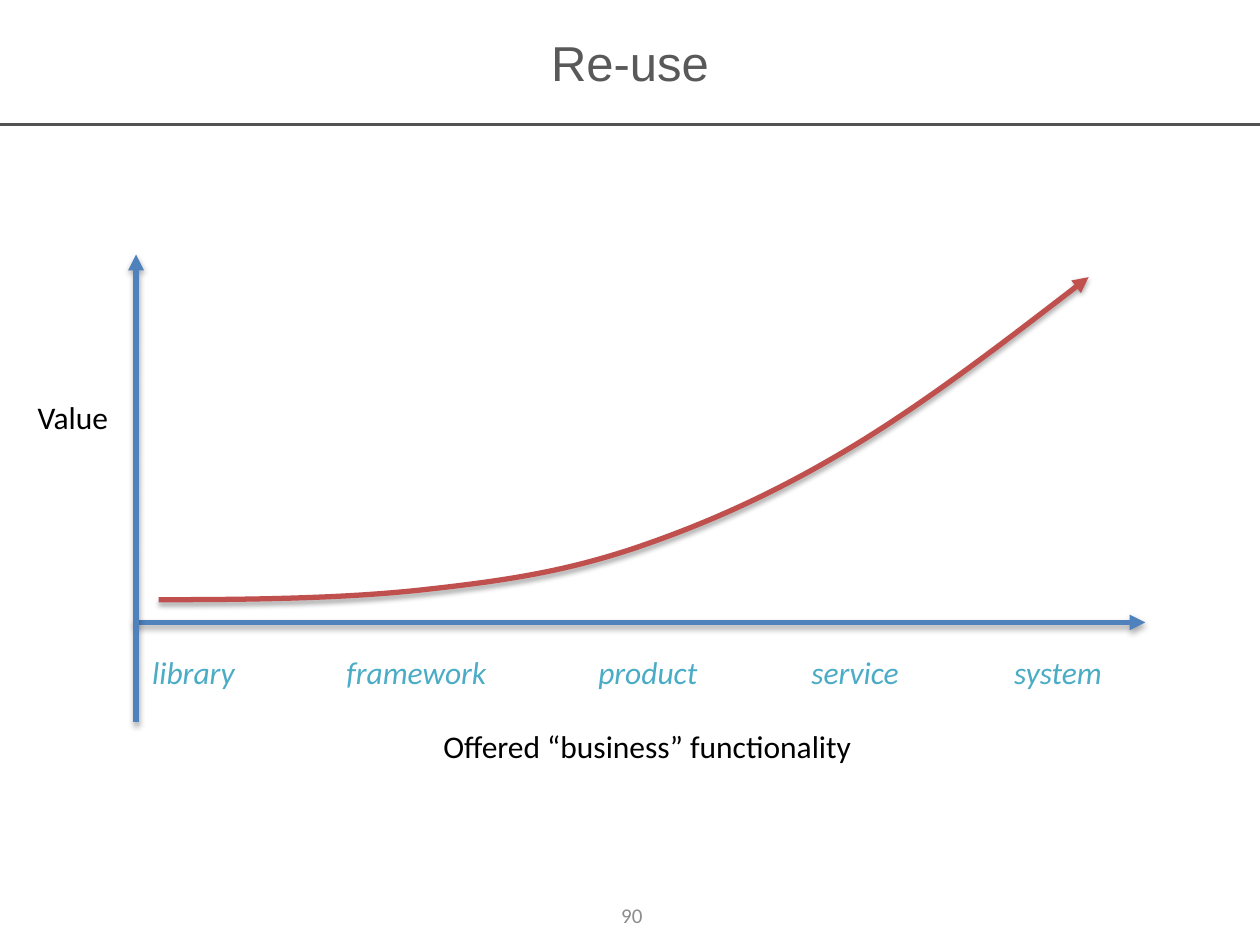
from lxml import etree
from pptx import Presentation
from pptx.dml.color import RGBColor
from pptx.enum.shapes import MSO_CONNECTOR
from pptx.enum.text import MSO_ANCHOR, MSO_AUTO_SIZE, PP_ALIGN
from pptx.oxml.ns import qn
from pptx.util import Inches, Pt

STRAIGHT = MSO_CONNECTOR.STRAIGHT
MIDDLE, TOP = MSO_ANCHOR.MIDDLE, MSO_ANCHOR.TOP
CENTER, LEFT = PP_ALIGN.CENTER, PP_ALIGN.LEFT
FIT_SHAPE, NO_FIT = MSO_AUTO_SIZE.SHAPE_TO_FIT_TEXT, MSO_AUTO_SIZE.NONE

COLORS = {
    "title": "595959", "rule": "525252", "axis": "4F81BD", "curve": "C0504D",
    "label": "000000", "stage": "4BACC6", "number": "8C8C8C", "shadow": "000000",
}

TITLE = "Re-use"
PAGE_NUMBER = "90"
RULE_Y = 0.99
LABEL_HEIGHT = 0.4
STAGE_TOP = 5.13
AXIS_LABELS = [("Value", 0.2, 3.11, 0.77),
               ("Offered “business” functionality", 3.42, 5.72, 3.48)]
STAGES = [("library", 1.11, 0.86), ("framework", 2.65, 1.32), ("product", 4.65, 1.01),
          ("service", 6.34, 0.92), ("system", 7.95, 0.91)]
AXES = [((1.06, 4.94), (9.09, 4.94)), ((1.08, 5.73), (1.08, 2.02))]
CURVE_START = (1.26, 4.76)
# Each Bézier segment takes three points: two controls and an end.
CURVE_POINTS = [
    (2, 4.76), (2.74, 4.75), (3.37, 4.68),
    (4, 4.61), (4.47, 4.54), (5.04, 4.35),
    (5.6, 4.16), (6.14, 3.92), (6.74, 3.56),
    (7.34, 3.2), (7.99, 2.7), (8.64, 2.2),
]


def color(name):
    return RGBColor.from_string(COLORS[name])


def style_line(shape, color_name, width, arrow=False):
    """Set the stroke; an arrow also gets a head at its end and a soft shadow."""
    shape.line.color.rgb = color(color_name)
    shape.line.width = Pt(width)
    properties = shape._element.spPr
    effects = etree.SubElement(properties, qn("a:effectLst"))
    if arrow:
        etree.SubElement(properties.find(qn("a:ln")), qn("a:tailEnd"), type="triangle")
        shadow = etree.SubElement(effects, qn("a:outerShdw"), blurRad=str(Pt(3.1)),
                                  dist=str(Pt(1.8)), dir="5400000", rotWithShape="0")
        tint = etree.SubElement(shadow, qn("a:srgbClr"), val=COLORS["shadow"])
        etree.SubElement(tint, qn("a:alpha"), val="35000")


def add_line(page, start, end, color_name, width, arrow=False):
    ends = [Inches(value) for value in (*start, *end)]
    style_line(page.shapes.add_connector(STRAIGHT, *ends), color_name, width, arrow)


def add_text(page, text, place, color_name, size=18, font="Calibri",
             italic=False, centered=False):
    box = page.shapes.add_textbox(*[Inches(value) for value in place])
    frame = box.text_frame
    frame.word_wrap = centered
    frame.auto_size = NO_FIT if centered else FIT_SHAPE
    frame.vertical_anchor = MIDDLE if centered else TOP
    para = frame.paragraphs[0]
    para.alignment = CENTER if centered else LEFT
    span = para.add_run()
    span.text = text
    span.font.name = font
    span.font.size = Pt(size)
    span.font.italic = italic
    span.font.color.rgb = color(color_name)


def add_curve(page):
    """Draw the control points as an outline, then turn its lines into Bézier segments."""
    start_x, start_y = CURVE_START
    builder = page.shapes.build_freeform(Inches(start_x), Inches(start_y))
    builder.add_line_segments([(Inches(x), Inches(y)) for x, y in CURVE_POINTS], close=False)
    curve = builder.convert_to_shape()
    outline = curve._element.spPr.find(".//" + qn("a:path"))
    lines = outline.findall(qn("a:lnTo"))
    for first in range(0, len(lines), 3):
        segment = etree.SubElement(outline, qn("a:cubicBezTo"))
        for line in lines[first:first + 3]:
            segment.append(line[0])
            outline.remove(line)
    curve.fill.background()
    style_line(curve, "curve", 3, arrow=True)


def main():
    deck = Presentation()
    deck.slide_width, deck.slide_height = Inches(10), Inches(7.5)
    page = deck.slides.add_slide(deck.slide_layouts[6])

    add_line(page, (0, RULE_Y), (10, RULE_Y), "rule", 1.5)
    add_text(page, TITLE, (0, 0, 10, RULE_Y), "title", 28, "Arial", centered=True)
    for start, end in AXES:
        add_line(page, start, end, "axis", 3, arrow=True)
    for text, left, top, width in AXIS_LABELS:
        add_text(page, text, (left, top, width, LABEL_HEIGHT), "label")
    for text, left, width in STAGES:
        add_text(page, text, (left, STAGE_TOP, width, LABEL_HEIGHT), "stage", italic=True)
    add_curve(page)
    add_text(page, PAGE_NUMBER, (3.85, 7.06, 2.33, LABEL_HEIGHT), "number", 12, centered=True)

    deck.save("out.pptx")


if __name__ == "__main__":
    main()
